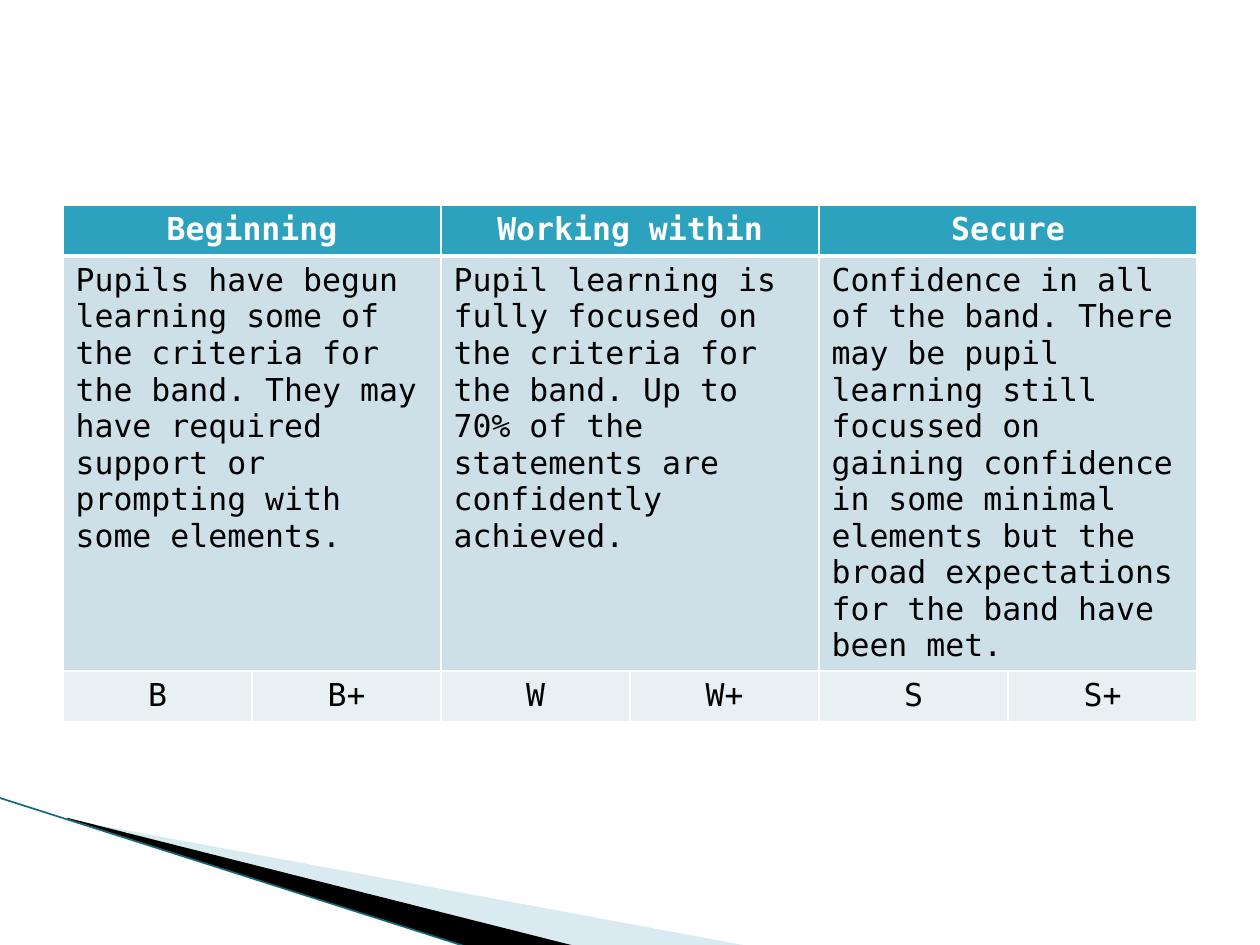
from dataclasses import dataclass

from lxml import etree
from pptx import Presentation
from pptx.dml.color import RGBColor
from pptx.enum.shapes import MSO_CONNECTOR
from pptx.enum.text import PP_ALIGN
from pptx.oxml.ns import qn
from pptx.util import Pt

STRAIGHT = MSO_CONNECTOR.STRAIGHT
LEFT, CENTER = PP_ALIGN.LEFT, PP_ALIGN.CENTER


@dataclass(frozen=True)
class Theme:
    font: str = "DejaVu Sans Mono"
    size: float = 18
    white: str = "FFFFFF"
    black: str = "000000"
    header: str = "2DA2BF"
    body: str = "CDE0E8"
    grade: str = "E8F0F4"
    pale_wedge: str = "A0CBDC"
    edge: str = "16697A"
    edge_width: float = 0.95
    rule: float = 1
    header_rule: float = 3


@dataclass(frozen=True)
class Wedge:
    points: tuple
    color: str
    opacity: int = 100


@dataclass(frozen=True)
class Stage:
    title: str
    description: str
    grades: tuple


@dataclass(frozen=True)
class CellStyle:
    fill: str
    color: str
    align: PP_ALIGN
    bold: bool = False
    top: float = 1
    bottom: float = 1


THEME = Theme()

WEDGES = [
    Wedge(((39.6, 468.4), (428.4, 540.7), (328.3, 540.7), (39.6, 468)),
          THEME.pale_wedge, 40),
    Wedge(((38.2, 467.3), (329, 540.7), (267.8, 541.4), (38.9, 468)),
          THEME.black),
]

STAGES = [
    Stage("Beginning",
          "Pupils have begun learning some of the criteria for the band. "
          "They may have required support or prompting with some elements.",
          ("B", "B+")),
    Stage("Working within",
          "Pupil learning is fully focused on the criteria for the band. "
          "Up to 70% of the statements are confidently achieved.",
          ("W", "W+")),
    Stage("Secure",
          "Confidence in all of the band. There may be pupil learning still "
          "focussed on gaining confidence in some minimal elements but the "
          "broad expectations for the band have been met.",
          ("S", "S+")),
]

HEADER = CellStyle(THEME.header, THEME.white, CENTER, bold=True,
                   bottom=THEME.header_rule)
BODY = CellStyle(THEME.body, THEME.black, LEFT, top=THEME.header_rule)
GRADE = CellStyle(THEME.grade, THEME.black, CENTER)

ROW_HEIGHTS = (29.2, 237.2, 29.2)
COLUMN_WIDTH = 108
TABLE_LEFT, TABLE_TOP = 36, 117


def rgb(color: str) -> RGBColor:
    return RGBColor.from_string(color)


def draw_wedge(slide, wedge: Wedge) -> None:
    start, *rest = [(Pt(x), Pt(y)) for x, y in wedge.points]
    builder = slide.shapes.build_freeform(*start, scale=1.0)
    builder.add_line_segments(rest, close=True)
    shape = builder.convert_to_shape()
    shape.shadow.inherit = False
    shape.line.fill.background()
    shape.fill.solid()
    shape.fill.fore_color.rgb = rgb(wedge.color)
    if wedge.opacity < 100:
        color = shape.fill._xPr.find(".//" + qn("a:srgbClr"))
        etree.SubElement(color, qn("a:alpha"), val=str(wedge.opacity * 1000))


def draw_edge(slide) -> None:
    edge = slide.shapes.add_connector(STRAIGHT, Pt(-0.7), Pt(455.8), Pt(267.8), Pt(541.4))
    edge.line.color.rgb = rgb(THEME.edge)
    edge.line.width = Pt(THEME.edge_width)
    etree.SubElement(edge._element.spPr, qn("a:effectLst"))


def style_cell(cell, style: CellStyle) -> None:
    # Borders come before the fill in the cell properties
    properties = cell._tc.get_or_add_tcPr()
    widths = {"lnL": THEME.rule, "lnR": THEME.rule,
              "lnT": style.top, "lnB": style.bottom}
    for side, width in widths.items():
        border = etree.SubElement(properties, qn("a:" + side), w=str(Pt(width)))
        fill = etree.SubElement(border, qn("a:solidFill"))
        etree.SubElement(fill, qn("a:srgbClr"), val=THEME.white)
    cell.fill.solid()
    cell.fill.fore_color.rgb = rgb(style.fill)


def write_cell(cell, text: str, style: CellStyle) -> None:
    paragraph = cell.text_frame.paragraphs[0]
    paragraph.alignment = style.align
    run = paragraph.add_run()
    run.text = text
    formats = {"name": THEME.font, "size": Pt(THEME.size), "bold": style.bold}
    for attribute, value in formats.items():
        setattr(run.font, attribute, value)
    run.font.color.rgb = rgb(style.color)


def draw_stage_table(slide) -> None:
    columns = 2 * len(STAGES)
    table = slide.shapes.add_table(
        len(ROW_HEIGHTS), columns, Pt(TABLE_LEFT), Pt(TABLE_TOP),
        Pt(columns * COLUMN_WIDTH), Pt(sum(ROW_HEIGHTS))).table
    for row, height in zip(table.rows, ROW_HEIGHTS):
        row.height = Pt(height)
    for row, style in enumerate((HEADER, BODY, GRADE)):
        for column in range(columns):
            style_cell(table.cell(row, column), style)

    # Each stage spans two columns, with one grade under each
    for index, stage in enumerate(STAGES):
        first = 2 * index
        for row, (text, style) in enumerate(((stage.title, HEADER),
                                             (stage.description, BODY))):
            cell = table.cell(row, first)
            cell.merge(table.cell(row, first + 1))
            write_cell(cell, text, style)
        for offset, grade in enumerate(stage.grades):
            write_cell(table.cell(2, first + offset), grade, GRADE)


def main() -> None:
    deck = Presentation()
    deck.slide_width, deck.slide_height = Pt(720), Pt(540)
    slide = deck.slides.add_slide(deck.slide_layouts[6])

    # Corner decoration
    for wedge in WEDGES:
        draw_wedge(slide, wedge)
    draw_edge(slide)

    # Assessment stages
    draw_stage_table(slide)
    deck.save("out.pptx")


if __name__ == "__main__":
    main()
